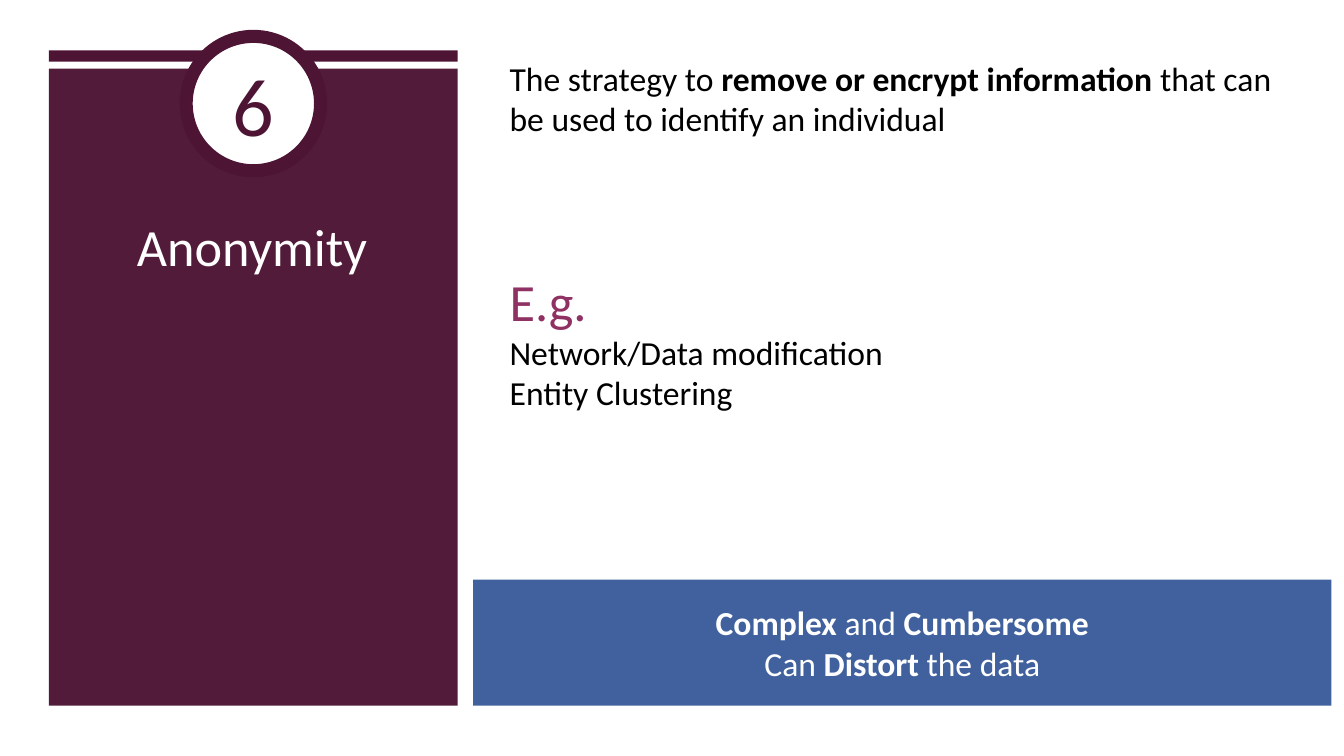
import pptx
import pptx.util
import pptx.dml.color
import pptx.enum.shapes
import pptx.enum.text
import lxml.etree
import pptx.oxml.ns

RGB = pptx.dml.color.RGBColor
PLUM = RGB(0x4D, 0x14, 0x34)
ROSE = RGB(0x90, 0x31, 0x63)
BLUE = RGB(0x40, 0x61, 0x9D)
WHITE = RGB(0xFF, 0xFF, 0xFF)
BLACK = RGB(0, 0, 0)

KIND = pptx.enum.shapes.MSO_SHAPE
ALIGN = pptx.enum.text.PP_ALIGN
ANCHOR = pptx.enum.text.MSO_ANCHOR
FIT = pptx.enum.text.MSO_AUTO_SIZE

FONT = "Calibri"
SCALE = 9525  # EMU per px, 96 px to the inch


def px(num):
    return pptx.util.Emu(num * SCALE)


def write(shape, paras, size=18, color=BLACK, align=ALIGN.LEFT,
          anchor=ANCHOR.TOP, wrap=True, top=5):
    """Fill a shape with paragraphs, each a list of (text, format) runs."""
    frame = shape.text_frame
    frame.word_wrap = wrap
    frame.auto_size = FIT.NONE
    frame.vertical_anchor = anchor
    frame.margin_left = frame.margin_right = px(10)
    frame.margin_top, frame.margin_bottom = px(top), px(5)
    for i, runs in enumerate(paras):
        para = frame.add_paragraph() if i else frame.paragraphs[0]
        para.alignment = align
        for text, look in runs:
            run = para.add_run()
            run.text = text
            font = run.font
            font.name = FONT
            font.size = pptx.util.Pt(look.get("size", size))
            font.bold = look.get("bold", False)
            font.color.rgb = look.get("color", color)


def draw(slide, kind, box, fill, line=None, width=0, alpha=None):
    shape = slide.shapes.add_shape(kind, *map(px, box))
    shape.shadow.inherit = False
    shape.fill.solid()
    shape.fill.fore_color.rgb = fill
    if alpha:
        tag = pptx.oxml.ns.qn
        tone = shape._element.spPr.find(".//" + tag("a:srgbClr"))
        lxml.etree.SubElement(tone, tag("a:alpha"), val=str(alpha * 1000))
    if line is None:
        shape.line.fill.background()
    else:
        shape.line.color.rgb = line
        shape.line.width = pptx.util.Pt(width)
    return shape


def panel(slide, box, num, name):
    """Plum column with a top stripe, numbered badge and slide title."""
    x, y, w, h = box
    gap, stripe, disc = 13, 8, 96
    draw(slide, KIND.RECTANGLE, (x, y + gap, w, h - gap), PLUM, alpha=97)
    draw(slide, KIND.RECTANGLE, (x, y, w, stripe), PLUM)

    # Title, raised above the column
    title = slide.shapes.title
    slide.shapes._spTree.append(title._element)
    title.left, title.top = px(x + 21), px(y + 111)
    title.width, title.height = px(w - 44), px(h - 124)
    write(title, [[(name, {})]], size=28, color=WHITE,
          align=ALIGN.CENTER, top=6)

    # Badge
    badge = draw(slide, KIND.OVAL, (x + (w - disc) // 2, y - 10, disc, disc),
                 WHITE, line=PLUM, width=7)
    write(badge, [[(num, {})]], size=44, color=PLUM,
          align=ALIGN.CENTER, anchor=ANCHOR.MIDDLE)


def body(slide, box):
    """Definition at the top, examples below."""
    x, y, w, h = box
    lead = slide.shapes.add_textbox(px(x), px(y), px(w), px(68))
    write(lead, [[("The strategy to ", {}),
                  ("remove or encrypt information ", {"bold": True}),
                  ("that can be used to identify an individual", {})]])
    cases = slide.shapes.add_textbox(px(x), px(y + h - 113), px(w // 2), px(113))
    write(cases, [[("E.g.", {"size": 28, "color": ROSE})],
                  [("Network/Data modification", {})],
                  [("Entity Clustering", {})]], wrap=False)


def banner(slide, box):
    """Blue bar with the drawbacks."""
    bold = {"bold": True}
    bar = draw(slide, KIND.RECTANGLE, box, BLUE)
    write(bar, [[("Complex", bold), (" and ", {}), ("Cumbersome", bold)],
                [("Can ", {}), ("Distort", bold), (" the data", {})]],
          color=WHITE, align=ALIGN.CENTER, anchor=ANCHOR.MIDDLE)


def main():
    deck = pptx.Presentation()
    deck.slide_width, deck.slide_height = px(960), px(540)
    slide = deck.slides.add_slide(deck.slide_layouts.get_by_name("Title Only"))
    slide.background.fill.solid()
    slide.background.fill.fore_color.rgb = WHITE

    panel(slide, (35, 36, 292, 468), "6", "Anonymity")
    body(slide, (354, 36, 582, 264))
    banner(slide, (338, 414, 613, 90))
    deck.save("out.pptx")


if __name__ == "__main__":
    main()
